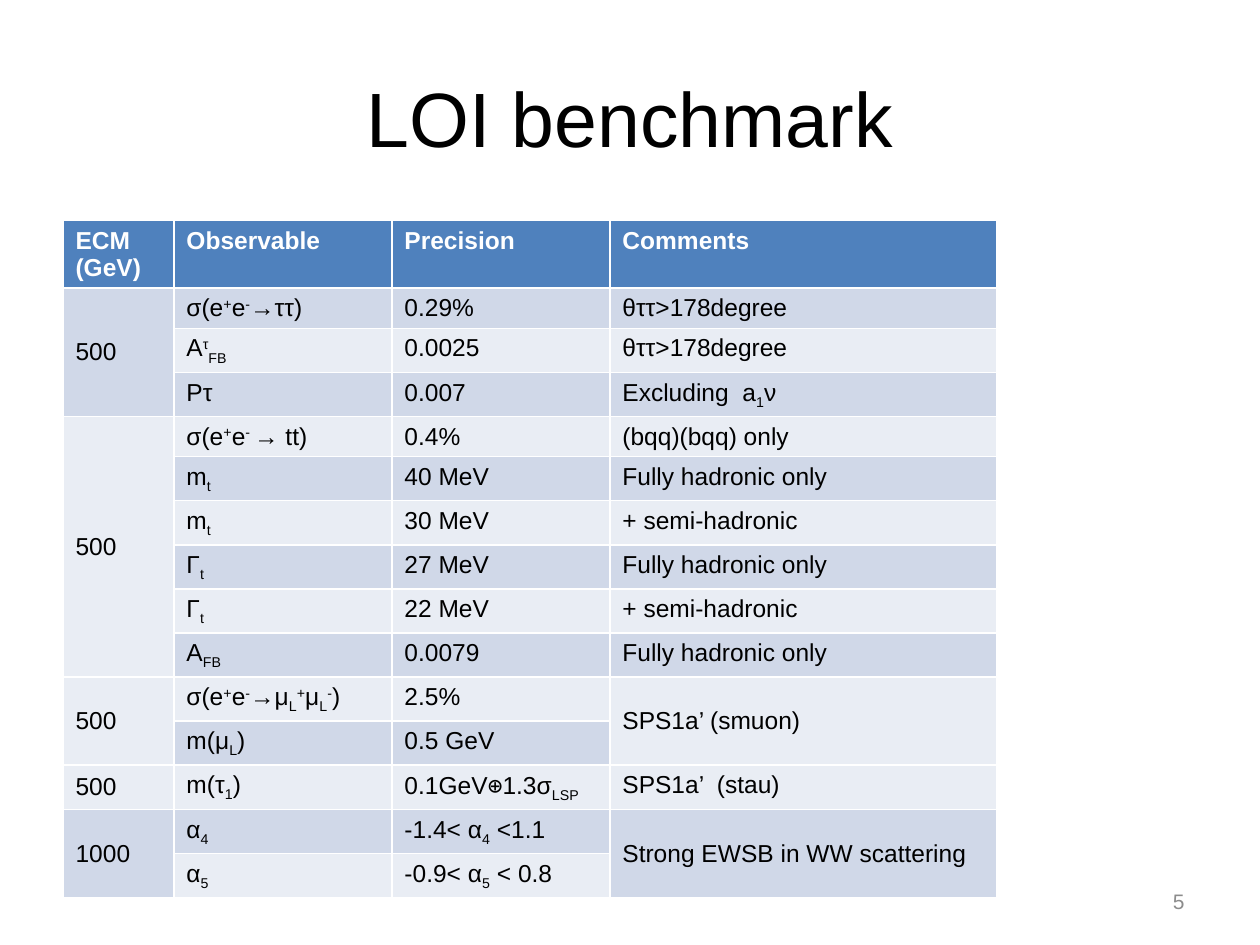
"""Build the LOI benchmark slide: a title, a banded results table and a page number."""
from pptx import Presentation
from pptx.dml.color import RGBColor
from pptx.enum.text import MSO_ANCHOR, PP_ALIGN
from pptx.util import Inches, Pt

MIDDLE, TOP = MSO_ANCHOR.MIDDLE, MSO_ANCHOR.TOP
CENTER, RIGHT = PP_ALIGN.CENTER, PP_ALIGN.RIGHT

BLACK = RGBColor(0x00, 0x00, 0x00)
WHITE = RGBColor(0xFF, 0xFF, 0xFF)
GRAY = RGBColor(0x8C, 0x8C, 0x8C)
HEADER_BLUE = RGBColor(0x4F, 0x81, 0xBD)
BANDS = (RGBColor(0xE9, 0xED, 0xF4), RGBColor(0xD0, 0xD8, 0xE8))

FONT, SYMBOL_FONT = "Arial", "DejaVu Sans Mono"
BASELINES = {"^": "30000", "_": "-25000"}

TITLE = "LOI benchmark"
PAGE_NUMBER = "5"
COLUMN_WIDTHS = (0.88, 1.73, 1.73, 3.07)
HEADER_HEIGHT, ROW_HEIGHT, TABLE_HEIGHT = 0.46, 0.27, 5.23

# "|" separates runs, "^" raises a run, "_" lowers it; None continues the cell above.
ROWS = [
    ("ECM (GeV)", "Observable", "Precision", "Comments"),
    ("500", "σ(e|^+|e|^-|→ττ)", "0.29%", "θττ>178degree"),
    (None, "A|^τ|_FB", "0.0025", "θττ>178degree"),
    (None, "Pτ", "0.007", "Excluding  a|_1|ν"),
    ("500", "σ(e|^+|e|^- |→ tt)", "0.4%", "(bqq)(bqq) only"),
    (None, "m|_t", "40 MeV", "Fully hadronic only"),
    (None, "m|_t", "30 MeV", "+ semi-hadronic"),
    (None, "Γ|_t", "27 MeV", "Fully hadronic only"),
    (None, "Γ|_t", "22 MeV", "+ semi-hadronic"),
    (None, "A|_FB", "0.0079", "Fully hadronic only"),
    ("500", "σ(e|^+|e|^-|→μ|_L|^+|μ|_L|^-|)", "2.5%", "SPS1a’ (smuon)"),
    (None, "m(μ|_L|)", "0.5 GeV", None),
    ("500", "m(τ|_1|)", "0.1GeV|⊕|1.3σ|_LSP", "SPS1a’  (stau)"),
    ("1000", "α|_4", "-1.4< α|_4| <1.1", "Strong EWSB in WW scattering"),
    (None, "α|_5", "-0.9< α|_5| < 0.8", None),
]


def style(paragraph, size, color, alignment=None, bold=False):
    paragraph.alignment = alignment
    font = paragraph.font
    font.name, font.size, font.bold = FONT, Pt(size), bold
    font.color.rgb = color


def write_runs(paragraph, markup):
    for part in markup.split("|"):
        run = paragraph.add_run()
        baseline = BASELINES.get(part[0])
        run.text = part[1:] if baseline else part
        if baseline:
            run._r.get_or_add_rPr().set("baseline", baseline)
        if part == "⊕":
            run.font.name = SYMBOL_FONT


def add_benchmark_table(slide):
    frame = slide.shapes.add_table(
        len(ROWS), len(COLUMN_WIDTHS), Inches(0.5), Inches(1.75),
        Inches(sum(COLUMN_WIDTHS)), Inches(TABLE_HEIGHT))
    table = frame.table
    for column, width in zip(table.columns, COLUMN_WIDTHS):
        column.width = Inches(width)
    for row_index, values in enumerate(ROWS):
        is_header = row_index == 0
        table.rows[row_index].height = Inches(HEADER_HEIGHT if is_header else ROW_HEIGHT)
        for column_index, markup in enumerate(values):
            cell = table.cell(row_index, column_index)
            cell.fill.solid()
            cell.fill.fore_color.rgb = HEADER_BLUE if is_header else BANDS[row_index % 2]
            paragraph = cell.text_frame.paragraphs[0]
            style(paragraph, 14, WHITE if is_header else BLACK, bold=is_header)
            if markup is None:
                continue
            write_runs(paragraph, markup)
            last = row_index
            while last + 1 < len(ROWS) and ROWS[last + 1][column_index] is None:
                last += 1
            if last > row_index:
                cell.merge(table.cell(last, column_index))
            is_energy = column_index == 0 and not is_header
            cell.vertical_anchor = MIDDLE if is_energy or last > row_index else TOP
    frame.height = Inches(TABLE_HEIGHT)


def main():
    presentation = Presentation()
    presentation.slide_width, presentation.slide_height = Inches(10), Inches(7.5)
    slide = presentation.slides.add_slide(presentation.slide_layouts[5])

    title = slide.shapes.title
    title.left, title.top = Inches(0.5), Inches(0.3)
    title.width, title.height = Inches(9), Inches(1.25)
    title.text_frame.text = TITLE
    title.text_frame.vertical_anchor = MIDDLE
    style(title.text_frame.paragraphs[0], 44, BLACK, CENTER)

    add_benchmark_table(slide)

    number = slide.shapes.add_textbox(Inches(7.17), Inches(6.95), Inches(2.33), Inches(0.4))
    number.text_frame.word_wrap = True
    number.text_frame.vertical_anchor = MIDDLE
    number.text_frame.text = PAGE_NUMBER
    style(number.text_frame.paragraphs[0], 12, GRAY, RIGHT)

    presentation.save("out.pptx")


if __name__ == "__main__":
    main()
